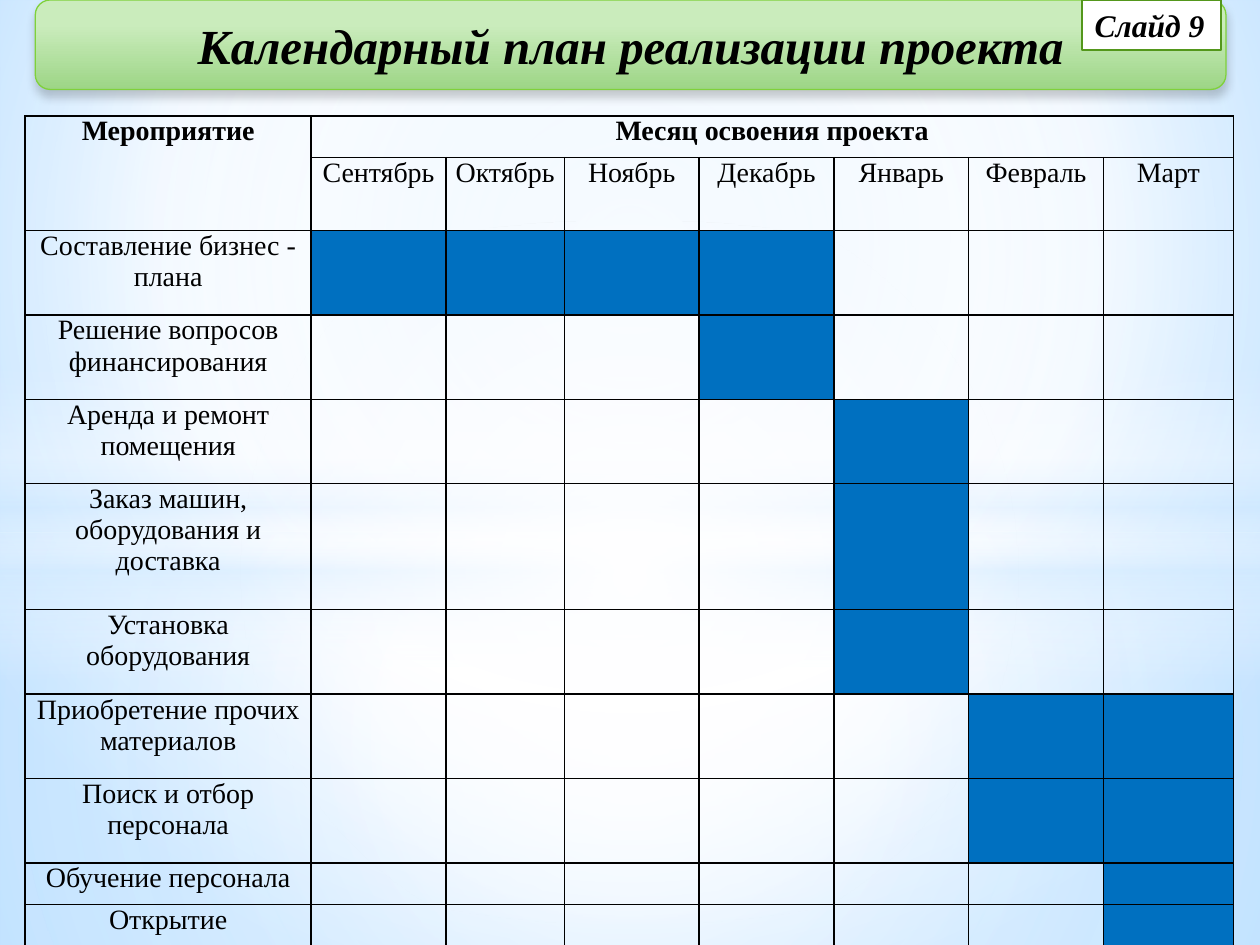
from lxml import etree
from pptx import Presentation
from pptx import util as u
from pptx.dml.color import RGBColor
from pptx.enum import shapes, text
from pptx.oxml.ns import qn

FONT = "Times New Roman"
BLACK, WHITE, PALE, BUSY = "000000", "FFFFFF", "D6ECFF", "0070C0"
MONTHS = ["Сентябрь", "Октябрь", "Ноябрь", "Декабрь", "Январь", "Февраль", "Март"]
# Activity, row height, first and last busy month
ACTIVITIES = [
    ("Составление бизнес - плана", 0.67, 1, 4),
    ("Решение вопросов финансирования", 0.67, 4, 4),
    ("Аренда и ремонт помещения", 0.67, 5, 5),
    ("Заказ машин, оборудования и доставка", 1, 5, 5),
    ("Установка оборудования", 0.67, 5, 5),
    ("Приобретение прочих материалов", 0.67, 6, 7),
    ("Поиск и отбор персонала", 0.67, 6, 7),
    ("Обучение персонала", 0.33, 7, 7),
    ("Открытие", 0.33, 7, 7),
]
COLUMN_WIDTHS = [2.27, 1.07, 0.94, 1.07, 1.07, 1.07, 1.07, 1.03]
HEADER_HEIGHTS = [0.33, 0.58]


def color(value):
    return RGBColor.from_string(value)


def add_node(parent, tag, **attributes):
    return etree.SubElement(parent, qn(tag), {k: str(v) for k, v in attributes.items()})


def add_color(parent, value, alpha=100):
    node = add_node(parent, "a:srgbClr", val=value)
    if alpha < 100:
        add_node(node, "a:alpha", val=alpha * 1000)


def set_gradient(properties, stops, center=None):
    """Turn a solid fill into a gradient: circular round center, else top to bottom."""
    solid = properties.find(qn("a:solidFill"))
    gradient = etree.Element(qn("a:gradFill"), rotWithShape="1")
    stop_list = add_node(gradient, "a:gsLst")
    for position, *stop in stops:
        add_color(add_node(stop_list, "a:gs", pos=position * 1000), *stop)
    if center:
        circle = add_node(gradient, "a:path", path="circle")
        add_node(circle, "a:fillToRect",
                 **{side: value * 1000 for side, value in zip("ltrb", center)})
    else:
        add_node(gradient, "a:lin", ang=5400000, scaled=0)
    properties.replace(solid, gradient)


def write(frame, words, size=16, bold=False, italic=False, align=text.PP_ALIGN.CENTER):
    paragraph = frame.paragraphs[0]
    paragraph.alignment = align
    run = paragraph.add_run()
    run.text = words
    font = run.font
    font.name, font.size, font.bold, font.italic = FONT, u.Pt(size), bold, italic
    font.color.rgb = color(BLACK)


def add_panel(slide, kind, box, fill=WHITE, line=None, line_width=1):
    panel = slide.shapes.add_shape(kind, *map(u.Inches, box))
    panel.shadow.inherit = False
    panel.fill.solid()
    panel.fill.fore_color.rgb = color(fill)
    if line:
        panel.line.color.rgb = color(line)
        panel.line.width = u.Pt(line_width)
    else:
        panel.line.fill.background()
    return panel


def add_backdrop(slide, box):
    left, top, width, height = box
    slide.background.fill.solid()
    set_gradient(slide._element.find(".//" + qn("p:bgPr")),
                 [(0, "C2E3FF"), (60, WHITE), (100, "79C1FF")], (20, 10, 20, 60))
    middle = (50, 50, 50, 50)
    rectangle, oval = shapes.MSO_SHAPE.RECTANGLE, shapes.MSO_SHAPE.OVAL
    # Lower and upper haze, horizon band, central glow
    layers = [
        (rectangle, 4.23, height - 4.23,
         [(0, WHITE, 91), (37, WHITE, 76), (100, PALE, 79)], middle),
        (rectangle, 0, 4.23, [(0, WHITE, 89), (48, WHITE, 62), (100, PALE, 79)], middle),
        (rectangle, 2.9, 2.5, [(0, WHITE, 0), (29, WHITE, 30), (45, PALE, 40),
                               (55, WHITE, 26), (65, PALE, 60), (100, WHITE, 0)], None),
        (oval, 1.75, 5.58, [(0, WHITE), (54, WHITE, 0)], middle),
    ]
    for kind, offset, layer_height, stops, center in layers:
        layer = add_panel(slide, kind, (left, top + offset, width, layer_height))
        set_gradient(layer._element.spPr, stops, center)


def add_title(slide, box):
    banner = add_panel(slide, shapes.MSO_SHAPE.ROUNDED_RECTANGLE, box,
                       line="7FD13B", line_width=0.75)
    properties = banner._element.spPr
    set_gradient(properties, [(28, "CAECBC"), (100, "9DD586")])
    shadow = add_node(properties.find(qn("a:effectLst")), "a:outerShdw",
                      blurRad=u.Pt(5), dist=u.Pt(4), dir=5400000, rotWithShape=0)
    add_color(shadow, BLACK, 20)
    # Title in front of its banner
    title = slide.shapes.title
    title.left, title.top, title.width, title.height = map(u.Inches, box)
    title.text_frame.vertical_anchor = text.MSO_ANCHOR.MIDDLE
    title.text_frame.auto_size = text.MSO_AUTO_SIZE.NONE
    write(title.text_frame, "Календарный план реализации проекта",
          size=28, bold=True, italic=True)
    banner._element.addnext(title._element)


def format_cell(cell, fill=None):
    cell.margin_left = cell.margin_right = u.Inches(0.07)
    cell.margin_top = cell.margin_bottom = 0
    properties = cell._tc.get_or_add_tcPr()
    for side in ("a:lnL", "a:lnR", "a:lnT", "a:lnB"):
        border = add_node(properties, side, w=u.Pt(1))
        add_color(add_node(border, "a:solidFill"), BLACK)
    if fill:
        cell.fill.solid()
        cell.fill.fore_color.rgb = color(fill)
    else:
        cell.fill.background()


def add_schedule(slide, box):
    heights = HEADER_HEIGHTS + [activity[1] for activity in ACTIVITIES]
    table = slide.shapes.add_table(len(heights), len(COLUMN_WIDTHS),
                                   *map(u.Inches, box)).table
    table.first_row = table.horz_banding = False
    for column, width in zip(table.columns, COLUMN_WIDTHS):
        column.width = u.Inches(width)
    for row, height in zip(table.rows, heights):
        row.height = u.Inches(height)
    # Header
    for row in range(len(HEADER_HEIGHTS)):
        for column in range(len(COLUMN_WIDTHS)):
            format_cell(table.cell(row, column))
    table.cell(0, 0).merge(table.cell(1, 0))
    table.cell(0, 1).merge(table.cell(0, len(MONTHS)))
    write(table.cell(0, 0).text_frame, "Мероприятие", bold=True)
    write(table.cell(0, 1).text_frame, "Месяц освоения проекта", bold=True)
    for column, month in enumerate(MONTHS, 1):
        write(table.cell(1, column).text_frame, month)
    # Activities and their busy months
    for row, (activity, _, first, last) in enumerate(ACTIVITIES, len(HEADER_HEIGHTS)):
        for column in range(len(COLUMN_WIDTHS)):
            format_cell(table.cell(row, column), BUSY if first <= column <= last else None)
        write(table.cell(row, 0).text_frame, activity)


def add_slide_label(slide, box):
    label = add_panel(slide, shapes.MSO_SHAPE.RECTANGLE, box, line="53971B", line_width=1.25)
    label.text_frame.word_wrap = True
    label.text_frame.auto_size = text.MSO_AUTO_SIZE.SHAPE_TO_FIT_TEXT
    label.text_frame.vertical_anchor = text.MSO_ANCHOR.TOP
    write(label.text_frame, "Слайд 9", size=18, bold=True, italic=True,
          align=text.PP_ALIGN.LEFT)


def main():
    deck = Presentation()
    deck.slide_width, deck.slide_height = u.Inches(10), u.Inches(7.5)
    slide = deck.slides.add_slide(deck.slide_layouts[5])
    add_backdrop(slide, (0, 0, 10, 7.5))
    add_title(slide, (0.28, 0, 9.45, 0.71))
    add_schedule(slide, (0.2, 0.92, 9.61, 6.58))
    add_slide_label(slide, (8.59, 0, 1.1, 0.4))
    deck.save("out.pptx")


if __name__ == "__main__":
    main()
